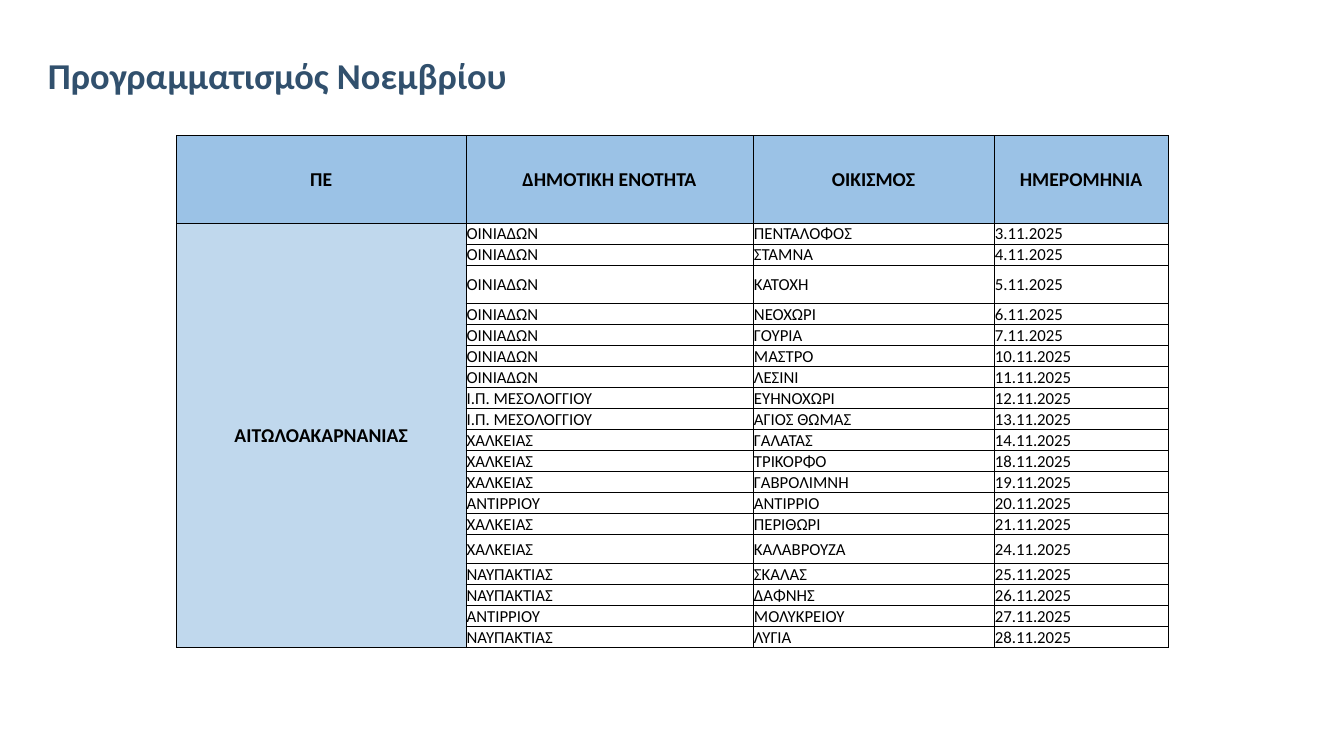
from dataclasses import dataclass

from lxml import etree
from pptx import Presentation
from pptx.dml.color import RGBColor
from pptx.enum.text import MSO_ANCHOR, PP_ALIGN
from pptx.oxml.ns import qn
from pptx.util import Cm, Pt

BOTTOM, MIDDLE = MSO_ANCHOR.BOTTOM, MSO_ANCHOR.MIDDLE
LEFT, CENTER = PP_ALIGN.LEFT, PP_ALIGN.CENTER


@dataclass(frozen=True)
class Theme:
    """Font, type sizes and colours of the slide."""
    font: str = "Calibri"
    title_size: int = 26
    heading_size: int = 14
    body_size: int = 12
    border_width: float = 0.5
    title: str = "31506D"
    text: str = "000000"
    header_fill: str = "9BC2E6"
    region_fill: str = "C0D8ED"


THEME = Theme()
TITLE = "Προγραμματισμός Νοεμβρίου"
HEADINGS = ["ΠΕ", "ΔΗΜΟΤΙΚΗ ΕΝΟΤΗΤΑ", "ΟΙΚΙΣΜΟΣ", "ΗΜΕΡΟΜΗΝΙΑ"]
REGION = "ΑΙΤΩΛΟΑΚΑΡΝΑΝΙΑΣ"
VISITS = [
    ("ΟΙΝΙΑΔΩΝ", "ΠΕΝΤΑΛΟΦΟΣ", 3),
    ("ΟΙΝΙΑΔΩΝ", "ΣΤΑΜΝΑ", 4),
    ("ΟΙΝΙΑΔΩΝ", "ΚΑΤΟΧΗ", 5),
    ("ΟΙΝΙΑΔΩΝ", "ΝΕΟΧΩΡΙ", 6),
    ("ΟΙΝΙΑΔΩΝ", "ΓΟΥΡΙΑ", 7),
    ("ΟΙΝΙΑΔΩΝ", "ΜΑΣΤΡΟ", 10),
    ("ΟΙΝΙΑΔΩΝ", "ΛΕΣΙΝΙ", 11),
    ("Ι.Π. ΜΕΣΟΛΟΓΓΙΟΥ", "ΕΥΗΝΟΧΩΡΙ", 12),
    ("Ι.Π. ΜΕΣΟΛΟΓΓΙΟΥ", "ΑΓΙΟΣ ΘΩΜΑΣ", 13),
    ("ΧΑΛΚΕΙΑΣ", "ΓΑΛΑΤΑΣ", 14),
    ("ΧΑΛΚΕΙΑΣ", "ΤΡΙΚΟΡΦΟ", 18),
    ("ΧΑΛΚΕΙΑΣ", "ΓΑΒΡΟΛΙΜΝΗ", 19),
    ("ΑΝΤΙΡΡΙΟΥ", "ΑΝΤΙΡΡΙΟ", 20),
    ("ΧΑΛΚΕΙΑΣ", "ΠΕΡΙΘΩΡΙ", 21),
    ("ΧΑΛΚΕΙΑΣ", "ΚΑΛΑΒΡΟΥΖΑ", 24),
    ("ΝΑΥΠΑΚΤΙΑΣ", "ΣΚΑΛΑΣ", 25),
    ("ΝΑΥΠΑΚΤΙΑΣ", "ΔΑΦΝΗΣ", 26),
    ("ΑΝΤΙΡΡΙΟΥ", "ΜΟΛΥΚΡΕΙΟΥ", 27),
    ("ΝΑΥΠΑΚΤΙΑΣ", "ΛΥΓΙΑ", 28),
]
COLUMN_WIDTHS = [7.29, 7.24, 6.07, 4.39]
HEADER_HEIGHT, ROW_HEIGHT = 2.21, 0.48
TALL_ROWS = {3: 0.97, 15: 0.73}


def style_paragraph(para, size, color, bold, align=LEFT):
    """Set the font and alignment of a paragraph."""
    para.alignment = align
    font = para.font
    font.name, font.size, font.bold = THEME.font, Pt(size), bold
    font.color.rgb = RGBColor.from_string(color)


def add_title(page, text):
    """Place the bold title above the table."""
    box = page.shapes.add_textbox(Cm(0.91), Cm(0.64), Cm(31.5), Cm(1.93))
    frame = box.text_frame
    frame.word_wrap = True
    frame.vertical_anchor = BOTTOM
    frame.margin_left = Cm(0.3)
    para = frame.paragraphs[0]
    para.text = text
    para.line_spacing = 0.9
    style_paragraph(para, THEME.title_size, THEME.title, True)


def add_borders(cell):
    """Draw a thin line on all four sides of a cell."""
    properties = cell._tc.get_or_add_tcPr()
    for side in ("a:lnL", "a:lnR", "a:lnT", "a:lnB"):
        line = etree.SubElement(properties, qn(side), w=str(Pt(THEME.border_width)))
        fill = etree.SubElement(line, qn("a:solidFill"))
        etree.SubElement(fill, qn("a:srgbClr"), val=THEME.text)


def fill_cell(cell, text, fill=None):
    """Write a cell: filled cells are bold and centred, others plain."""
    cell.margin_left = cell.margin_right = cell.margin_top = Cm(0.02)
    cell.margin_bottom = 0
    cell.vertical_anchor = MIDDLE
    add_borders(cell)
    para = cell.text_frame.paragraphs[0]
    para.text = text
    if fill:
        cell.fill.solid()
        cell.fill.fore_color.rgb = RGBColor.from_string(fill)
        style_paragraph(para, THEME.heading_size, THEME.text, True, CENTER)
    else:
        cell.fill.background()
        style_paragraph(para, THEME.body_size, THEME.text, False)


def add_schedule(page):
    """Add the table of visits, with one region cell spanning all of them."""
    heights = [HEADER_HEIGHT] + [
        TALL_ROWS.get(row, ROW_HEIGHT) for row in range(1, len(VISITS) + 1)
    ]
    table = page.shapes.add_table(
        len(heights), len(HEADINGS), Cm(4.45), Cm(3.41),
        Cm(sum(COLUMN_WIDTHS)), Cm(sum(heights)),
    ).table
    table.first_row = table.horz_banding = False
    for column, width in zip(table.columns, COLUMN_WIDTHS):
        column.width = Cm(width)
    for row, height in zip(table.rows, heights):
        row.height = Cm(height)
    for column, heading in enumerate(HEADINGS):
        fill_cell(table.cell(0, column), heading, THEME.header_fill)
    for row, (unit, settlement, day) in enumerate(VISITS, 1):
        region = REGION if row == 1 else ""
        fill_cell(table.cell(row, 0), region, THEME.region_fill)
        for column, text in enumerate((unit, settlement, f"{day}.11.2025"), 1):
            fill_cell(table.cell(row, column), text)
    table.cell(1, 0).merge(table.cell(len(VISITS), 0))


def main():
    """Build the deck and save it."""
    deck = Presentation()
    deck.slide_width, deck.slide_height = Cm(33.87), Cm(19.05)
    page = deck.slides.add_slide(deck.slide_layouts[6])
    add_title(page, TITLE)
    add_schedule(page)
    deck.save("out.pptx")


if __name__ == "__main__":
    main()
